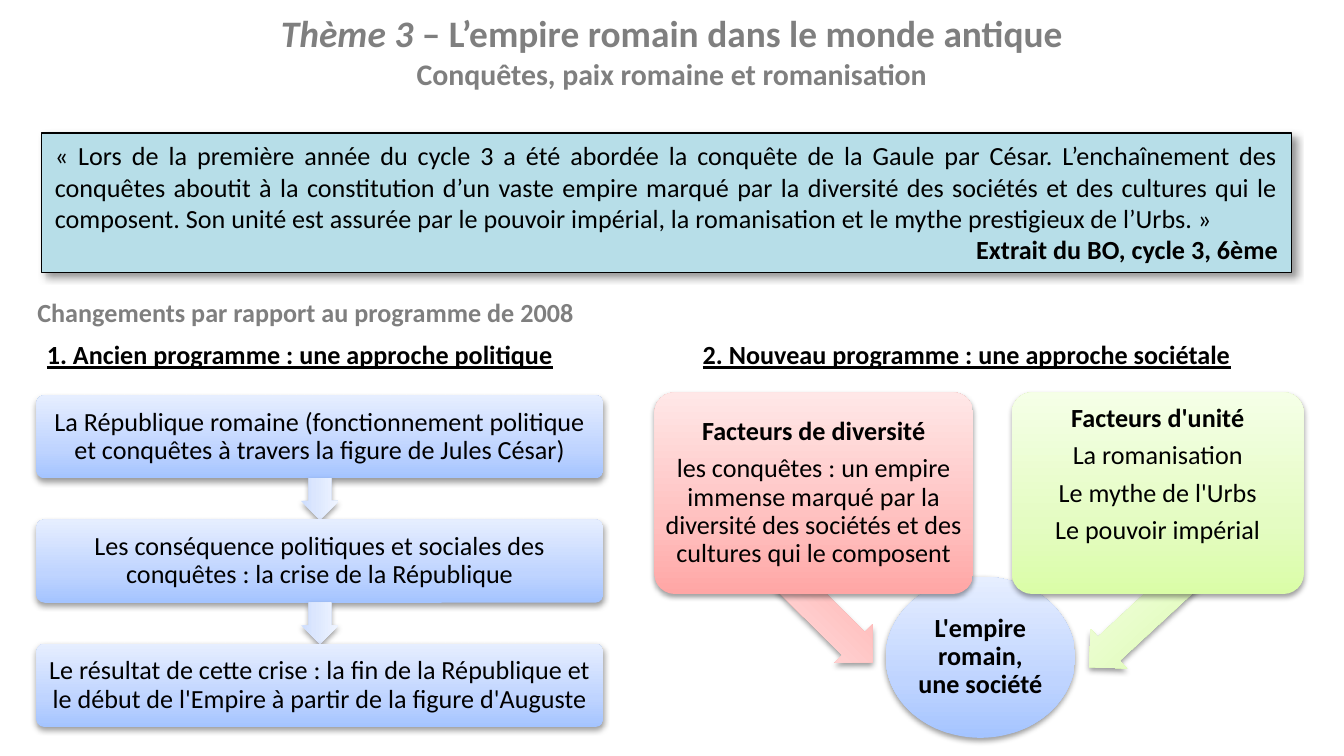
"""Build the slide comparing the old and new programmes on the Roman Empire."""
from copy import deepcopy

from lxml.etree import SubElement
from pptx import Presentation
from pptx.dml.color import RGBColor
from pptx.enum.shapes import MSO_SHAPE
from pptx.enum.text import MSO_ANCHOR, PP_ALIGN
from pptx.oxml.ns import qn
from pptx.util import Inches, Pt

BLACK = RGBColor(0, 0, 0)
WHITE = RGBColor(255, 255, 255)
GREY = RGBColor(0x7F, 0x7F, 0x7F)
TEAL = RGBColor(0xB7, 0xDE, 0xE8)


def gradient_colours(*codes):
    return [RGBColor.from_string(code) for code in codes]


BLUE = gradient_colours("A4C4FF", "BFD4FF", "E6EEFF")
PALE_BLUE = gradient_colours("CDDDFE", "DBE6FE", "F0F5FF")
RED = gradient_colours("FFA6A5", "FFC0BF", "FFE7E7")
GREEN = gradient_colours("DAFDA7", "E4FCC2", "F5FFE7")
STOPS = (0, 0.35, 1)

BOLD = {"bold": True}
PLAIN = {"bold": False}
HEADING = {"bold": True, "underline": True}
CENTRED = {"alignment": PP_ALIGN.CENTER}
DIAGRAM = {"alignment": PP_ALIGN.CENTER, "line_spacing": 0.9, "space_after": Pt(4.9)}
SOFT_SHADOW = {"blur": 3.1, "distance": 1.6, "angle": 90, "opacity": 38}
QUOTE_SHADOW = {"blur": 4, "distance": 3, "angle": 45, "opacity": 40}

TITLE = [[("Thème 3 ", {"bold": True, "italic": True}),
          ("– L’empire romain dans le monde antique", BOLD)]]
SUBTITLE = [[("Conquêtes, paix romaine et romanisation", BOLD)]]
CHANGES = [[("Changements par rapport au programme de 2008", BOLD)]]
OLD_HEADING = [[("1. Ancien programme : une approche politique", HEADING)]]
NEW_HEADING = [[("2. Nouveau programme : une approche sociétale", HEADING)]]
QUOTE = [
    [("« Lors de la première année du cycle 3 a été abordée la conquête de la Gaule "
      "par César. L’enchaînement des conquêtes aboutit à la constitution d’un vaste "
      "empire marqué par la diversité des sociétés et des cultures qui le composent. "
      "Son unité est assurée par le pouvoir impérial, la romanisation et le mythe "
      "prestigieux de l’Urbs. »", PLAIN)],
    [("Extrait du BO, cycle 3, 6ème", BOLD)],
]
STEPS = [
    "La République romaine (fonctionnement politique et conquêtes à travers la figure "
    "de Jules César)",
    "Les conséquence politiques et sociales des conquêtes : la crise de la République",
    "Le résultat de cette crise : la fin de la République et le début de l'Empire à "
    "partir de la figure d'Auguste",
]
SOCIETY = [[("L'empire romain, une société", BOLD)]]
FACTORS = [
    {"box": (4.87, 2.92, 2.37, 1.5), "arrow": (5.62, 4.37, 1.02, 0.4),
     "rotation": 224.7, "colours": RED, "anchor": MSO_ANCHOR.MIDDLE, "inset": 0.03,
     "title": "Facteurs de diversité",
     "items": ["les conquêtes : un empire immense marqué par la diversité des "
               "sociétés et des cultures qui le composent"]},
    {"box": (7.53, 2.92, 2.17, 1.5), "arrow": (7.97, 4.42, 1.01, 0.4),
     "rotation": 317.2, "colours": GREEN, "anchor": MSO_ANCHOR.TOP, "inset": 0.05,
     "title": "Facteurs d'unité",
     "items": ["La romanisation", "Le mythe de l'Urbs", "Le pouvoir impérial"]},
]
STEP_LEFT, STEP_WIDTH, STEP_HEIGHT = 0.27, 4.22, 0.62
FIRST_STEP_TOP, LAST_STEP_TOP = 2.94, 4.79
ARROW_LENGTH, ARROW_WIDTH = 0.31, 0.28


def apply_format(target, values):
    for name, value in values.items():
        setattr(target, name, value)


def write_text(shape, paragraphs, formats=({},), size=14, colour=BLACK,
               anchor=MSO_ANCHOR.TOP, inset=None):
    frame = shape.text_frame
    apply_format(frame, {"word_wrap": True, "vertical_anchor": anchor})
    if inset is not None:
        for side in ("left", "top", "right", "bottom"):
            setattr(frame, f"margin_{side}", Inches(inset))
    for index, spans in enumerate(paragraphs):
        para = frame.add_paragraph() if index else frame.paragraphs[0]
        apply_format(para, {"alignment": PP_ALIGN.LEFT, **formats[min(index, len(formats) - 1)]})
        for text, values in spans:
            span = para.add_run()
            span.text = text
            apply_format(span.font, {"name": "Calibri", "size": Pt(size), **values})
            span.font.color.rgb = colour


def add_text(slide, place, paragraphs, **options):
    box = slide.shapes.add_textbox(*map(Inches, place))
    write_text(box, paragraphs, **options)


def add_shadow(shape, blur, distance, angle, opacity):
    effects = shape._element.spPr.find(qn("a:effectLst"))
    shadow = SubElement(effects, qn("a:outerShdw"), blurRad=str(Pt(blur)),
                        dist=str(Pt(distance)), dir=str(angle * 60000), rotWithShape="0")
    colour = SubElement(shadow, qn("a:srgbClr"), val=str(BLACK))
    SubElement(colour, qn("a:alpha"), val=str(opacity * 1000))


def add_solid(slide, place, colour):
    shape = slide.shapes.add_shape(MSO_SHAPE.RECTANGLE, *map(Inches, place))
    shape.shadow.inherit = False
    shape.fill.solid()
    shape.fill.fore_color.rgb = colour
    shape.line.fill.background()
    return shape


def add_gradient(slide, kind, place, colours, adjustments=(), rotation=0):
    shape = slide.shapes.add_shape(kind, *map(Inches, place))
    shape.rotation = rotation
    for index, value in enumerate(adjustments):
        shape.adjustments[index] = value
    shape.fill.gradient()
    stop_list = shape._element.spPr.find(".//" + qn("a:gsLst"))
    stop_list.append(deepcopy(stop_list[-1]))
    for stop, position, colour in zip(shape.fill.gradient_stops, STOPS, colours):
        stop.position = position
        stop.color.rgb = colour
    shape.fill.gradient_angle = 90
    shape.line.fill.background()
    shape.shadow.inherit = False
    add_shadow(shape, **SOFT_SHADOW)
    return shape


def add_steps(slide):
    pitch = (LAST_STEP_TOP - FIRST_STEP_TOP) / (len(STEPS) - 1)
    arrow_left = STEP_LEFT + (STEP_WIDTH - ARROW_LENGTH) / 2
    arrow_offset = (STEP_HEIGHT + pitch - ARROW_WIDTH) / 2
    for index, text in enumerate(STEPS):
        top = FIRST_STEP_TOP + index * pitch
        box = add_gradient(slide, MSO_SHAPE.ROUNDED_RECTANGLE,
                           (STEP_LEFT, top, STEP_WIDTH, STEP_HEIGHT), BLUE, (0.1,))
        write_text(box, [[(text, PLAIN)]], [DIAGRAM], anchor=MSO_ANCHOR.MIDDLE, inset=0.06)
        if index < len(STEPS) - 1:
            place = (arrow_left, top + arrow_offset, ARROW_LENGTH, ARROW_WIDTH)
            add_gradient(slide, MSO_SHAPE.RIGHT_ARROW, place, PALE_BLUE, (0.6, 0.5), 90)


def add_factors(slide):
    circle = add_gradient(slide, MSO_SHAPE.OVAL, (6.59, 4.29, 1.41, 1.2), BLUE)
    write_text(circle, SOCIETY, [DIAGRAM], anchor=MSO_ANCHOR.MIDDLE, inset=0.01)
    for factor in FACTORS:
        add_gradient(slide, MSO_SHAPE.LEFT_ARROW, factor["arrow"], factor["colours"],
                     (0.6, 0.5), factor["rotation"])
        box = add_gradient(slide, MSO_SHAPE.ROUNDED_RECTANGLE, factor["box"],
                           factor["colours"], (0.1,))
        lines = [[(factor["title"], BOLD)]] + [[(item, PLAIN)] for item in factor["items"]]
        write_text(box, lines, [DIAGRAM], anchor=factor["anchor"], inset=factor["inset"])


def main():
    deck = Presentation()
    deck.slide_width = Inches(10)
    deck.slide_height = deck.slide_width * 9 // 16
    slide = deck.slides.add_slide(deck.slide_layouts[6])

    add_text(slide, (0.18, 2.16, 6.75, 0.34), CHANGES, colour=GREY)
    add_steps(slide)
    add_text(slide, (0.25, 2.47, 5.11, 0.38), OLD_HEADING)
    write_text(add_solid(slide, (5.13, 2.47, 4.76, 0.38), WHITE), NEW_HEADING)
    add_factors(slide)

    quote = add_solid(slide, (0.31, 0.99, 9.3, 1.04), TEAL)
    quote.line.color.rgb = BLACK
    quote.line.width = Pt(0.75)
    add_shadow(quote, **QUOTE_SHADOW)
    write_text(quote, QUOTE, [{"alignment": PP_ALIGN.JUSTIFY}, {"alignment": PP_ALIGN.RIGHT}])

    add_text(slide, (0.5, -0.08, 9, 0.65), TITLE, formats=[CENTRED], size=20,
             colour=GREY, anchor=MSO_ANCHOR.MIDDLE)
    add_text(slide, (0.5, 0.39, 9, 0.31), SUBTITLE, formats=[CENTRED], size=16,
             colour=GREY, anchor=MSO_ANCHOR.MIDDLE)
    deck.save("out.pptx")


if __name__ == "__main__":
    main()
